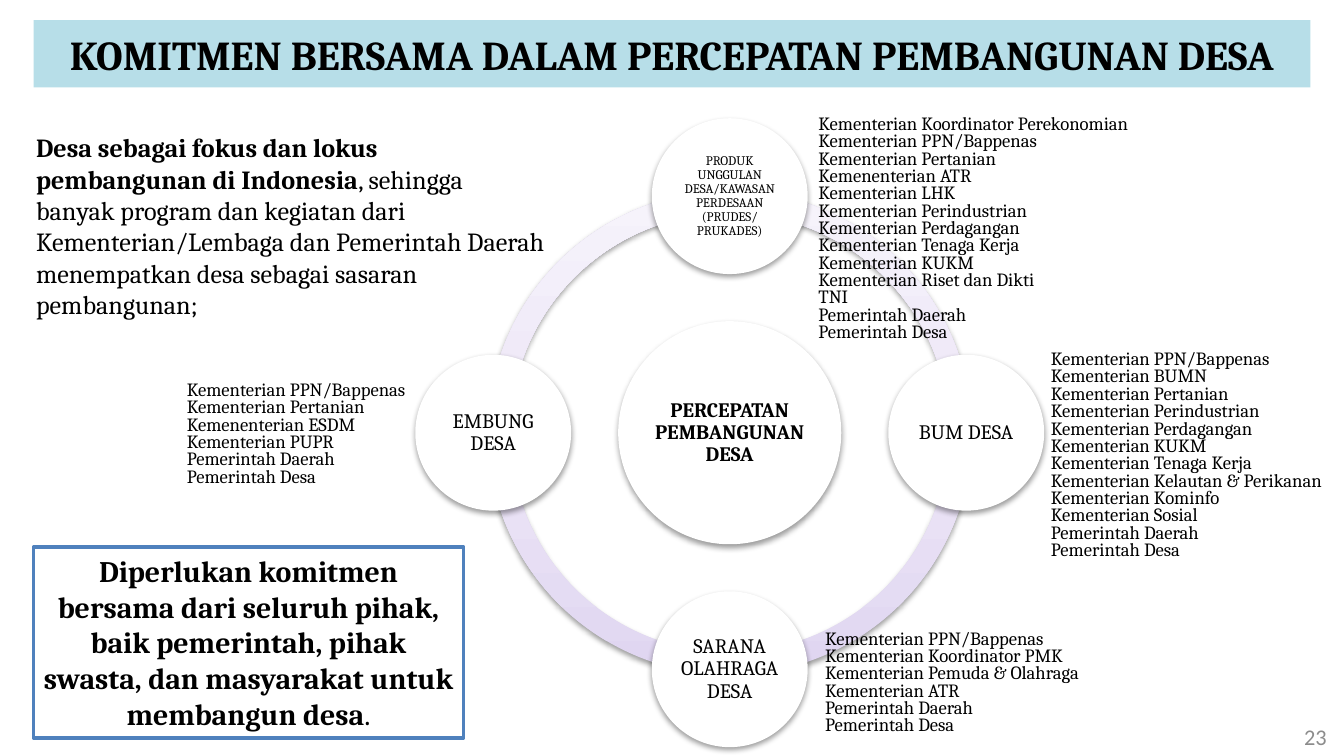
import copy
import math
from dataclasses import dataclass

import pptx
import pptx.dml.color
import pptx.enum.shapes
import pptx.enum.text
import pptx.oxml
import pptx.oxml.ns
import pptx.util

PX = pptx.util.Inches(1) // 100
SHAPES = pptx.enum.shapes.MSO_SHAPE
ALIGN = pptx.enum.text.PP_ALIGN
ANCHOR = pptx.enum.text.MSO_ANCHOR


@dataclass(frozen=True)
class Theme:
    font: str = "Cambria"
    number_font: str = "Calibri"
    ink: str = "000000"
    paper: str = "FFFFFF"
    banner: str = "B7DEE8"
    border: str = "4F81BD"
    muted: str = "8C8C8C"
    ring: tuple = ((0, "E0D6F1"), (0.35, "E9E1F5"), (1, "F6F3FB"))
    title_size: int = 22
    commitment_size: int = 16
    intro_size: int = 14
    number_size: int = 12
    node_size: int = 11
    list_size: int = 10
    small_size: int = 7
    list_spacing: float = 9.3


THEME = Theme()
SLIDE_WIDTH = 1000
CENTRE_X, CENTRE_Y = 543, 322
ORBIT, RING, HUB, NODE = 176, 360, 166, 116

# Clockwise from the top: text, type size
NODES = (
    ("PRODUK UNGGULAN DESA/KAWASAN PERDESAAN (PRUDES/ PRUKADES)", THEME.small_size),
    ("BUM DESA", THEME.node_size),
    ("SARANA OLAHRAGA DESA", THEME.node_size),
    ("EMBUNG DESA", THEME.node_size),
)

# Box, ministries; every list closes with LOCAL_GOVERNMENT
MINISTRY_LISTS = (
    ((600, 82, 314, 173), (
        "Kementerian Koordinator Perekonomian", "Kementerian PPN/Bappenas",
        "Kementerian Pertanian", "Kemenenterian ATR", "Kementerian LHK",
        "Kementerian Perindustrian", "Kementerian Perdagangan",
        "Kementerian Tenaga Kerja", "Kementerian KUKM",
        "Kementerian Riset dan Dikti", "TNI")),
    ((773, 257, 244, 161), (
        "Kementerian PPN/Bappenas", "Kementerian BUMN", "Kementerian Pertanian",
        "Kementerian Perindustrian", "Kementerian Perdagangan", "Kementerian KUKM",
        "Kementerian Tenaga Kerja", "Kementerian Kelautan & Perikanan",
        "Kementerian Kominfo", "Kementerian Sosial")),
    ((605, 465, 244, 85), (
        "Kementerian PPN/Bappenas", "Kementerian Koordinator PMK",
        "Kementerian Pemuda & Olahraga", "Kementerian ATR")),
    ((130, 280, 212, 85), (
        "Kementerian PPN/Bappenas", "Kementerian Pertanian",
        "Kemenenterian ESDM", "Kementerian PUPR")),
)
LOCAL_GOVERNMENT = ("Pemerintah Daerah", "Pemerintah Desa")


def rgb(colour):
    return pptx.dml.color.RGBColor.from_string(colour)


def square(centre_x, centre_y, side):
    return centre_x - side // 2, centre_y - side // 2, side, side


def write_text(shape, paragraphs, size, font=THEME.font, colour=THEME.ink, bold=False,
               align=ALIGN.LEFT, anchor=ANCHOR.TOP, insets=(10, 5), spacing=None):
    """Fill a shape; a paragraph is a string or a list of (text, bold) runs."""
    frame = shape.text_frame
    frame.word_wrap = True
    frame.vertical_anchor = anchor
    frame.margin_left = frame.margin_right = insets[0] * PX
    frame.margin_top = frame.margin_bottom = insets[1] * PX
    for index, content in enumerate(paragraphs):
        paragraph = frame.add_paragraph() if index else frame.paragraphs[0]
        paragraph.alignment = align
        if spacing:
            paragraph.line_spacing = spacing
        runs = [(content, bold)] if isinstance(content, str) else content
        for text, is_bold in runs:
            run = paragraph.add_run()
            run.text = text
            run.font.name = font
            run.font.size = pptx.util.Pt(size)
            run.font.bold = is_bold
            run.font.color.rgb = rgb(colour)


def add_shape(slide, kind, box, fill=THEME.paper, border=None):
    shape = slide.shapes.add_shape(kind, *(length * PX for length in box))
    shape.shadow.inherit = False
    shape.fill.solid()
    shape.fill.fore_color.rgb = rgb(fill)
    if border:
        shape.line.color.rgb = rgb(border)
        shape.line.width = pptx.util.Pt(2)
    else:
        shape.line.fill.background()
    return shape


def add_text(slide, box, paragraphs, **text_format):
    text_box = slide.shapes.add_textbox(*(length * PX for length in box))
    write_text(text_box, paragraphs, **text_format)


def add_soft_shadow(shape):
    effects = shape._element.spPr.find(pptx.oxml.ns.qn("a:effectLst"))
    effects.append(pptx.oxml.parse_xml(
        f'<a:outerShdw {pptx.oxml.ns.nsdecls("a")} blurRad="40000" dist="20000" '
        'dir="5400000" rotWithShape="0"><a:srgbClr val="000000">'
        '<a:alpha val="38000"/></a:srgbClr></a:outerShdw>'))


def add_ring_quarter(slide, start):
    """Add a quarter of the ring; angles are in units of 5/3 degrees."""
    arc = add_shape(slide, SHAPES.BLOCK_ARC, square(CENTRE_X, CENTRE_Y, RING))
    for index, value in enumerate((start, (start + 54) % 216, 0.046)):
        arc.adjustments[index] = value
    arc.fill.gradient()
    arc.fill.gradient_angle = 90
    stop_list = arc._element.spPr.find(".//" + pptx.oxml.ns.qn("a:gsLst"))
    stop_list.append(copy.deepcopy(stop_list[0]))
    for stop, (position, colour) in zip(arc.fill.gradient_stops, THEME.ring):
        stop.position = position
        stop.color.rgb = rgb(colour)
    add_soft_shadow(arc)


def add_circle(slide, centre_x, centre_y, diameter, text, size, bold=False):
    circle = add_shape(slide, SHAPES.OVAL, square(centre_x, centre_y, diameter))
    add_soft_shadow(circle)
    write_text(circle, [text], size=size, bold=bold, align=ALIGN.CENTER,
               anchor=ANCHOR.MIDDLE, insets=(2, 2), spacing=0.9)


def add_wheel(slide):
    for start in (108, 54, 0, 162):
        add_ring_quarter(slide, start)
    add_circle(slide, CENTRE_X, CENTRE_Y, HUB, "PERCEPATAN PEMBANGUNAN DESA",
               THEME.node_size, bold=True)
    for index, (text, size) in enumerate(NODES):
        angle = math.radians(90 * index - 90)
        add_circle(slide, CENTRE_X + round(ORBIT * math.cos(angle)),
                   CENTRE_Y + round(ORBIT * math.sin(angle)), NODE, text, size)


def main():
    presentation = pptx.Presentation()
    presentation.slide_width = SLIDE_WIDTH * PX
    presentation.slide_height = SLIDE_WIDTH * PX * 9 // 16
    slide = presentation.slides.add_slide(presentation.slide_layouts[6])

    add_wheel(slide)
    for box, ministries in MINISTRY_LISTS:
        add_text(slide, box, ministries + LOCAL_GOVERNMENT, size=THEME.list_size,
                 insets=(9, 5), spacing=pptx.util.Pt(THEME.list_spacing))
    add_text(slide, (764, 533, 233, 30), ["23"], size=THEME.number_size,
             font=THEME.number_font, colour=THEME.muted, align=ALIGN.RIGHT,
             anchor=ANCHOR.MIDDLE)

    commitment = add_shape(slide, SHAPES.RECTANGLE, (25, 407, 320, 142),
                           border=THEME.border)
    write_text(commitment, [[
        ("Diperlukan komitmen bersama dari seluruh pihak, baik pemerintah, "
         "pihak swasta, dan masyarakat untuk membangun desa", True),
        (".", False)]], size=THEME.commitment_size, align=ALIGN.CENTER, insets=(7, 4))
    add_text(slide, (17, 93, 399, 151), [[
        ("Desa sebagai fokus dan lokus pembangunan di Indonesia", True),
        (", sehingga banyak program dan kegiatan dari Kementerian/Lembaga dan "
         "Pemerintah Daerah menempatkan desa sebagai sasaran pembangunan;", False)]],
        size=THEME.intro_size)

    banner = add_shape(slide, SHAPES.RECTANGLE, (25, 15, 950, 50), fill=THEME.banner)
    write_text(banner, ["KOMITMEN BERSAMA DALAM PERCEPATAN PEMBANGUNAN DESA"],
               size=THEME.title_size, bold=True, align=ALIGN.CENTER,
               anchor=ANCHOR.MIDDLE, insets=(8, 4))

    presentation.save("out.pptx")


if __name__ == "__main__":
    main()
